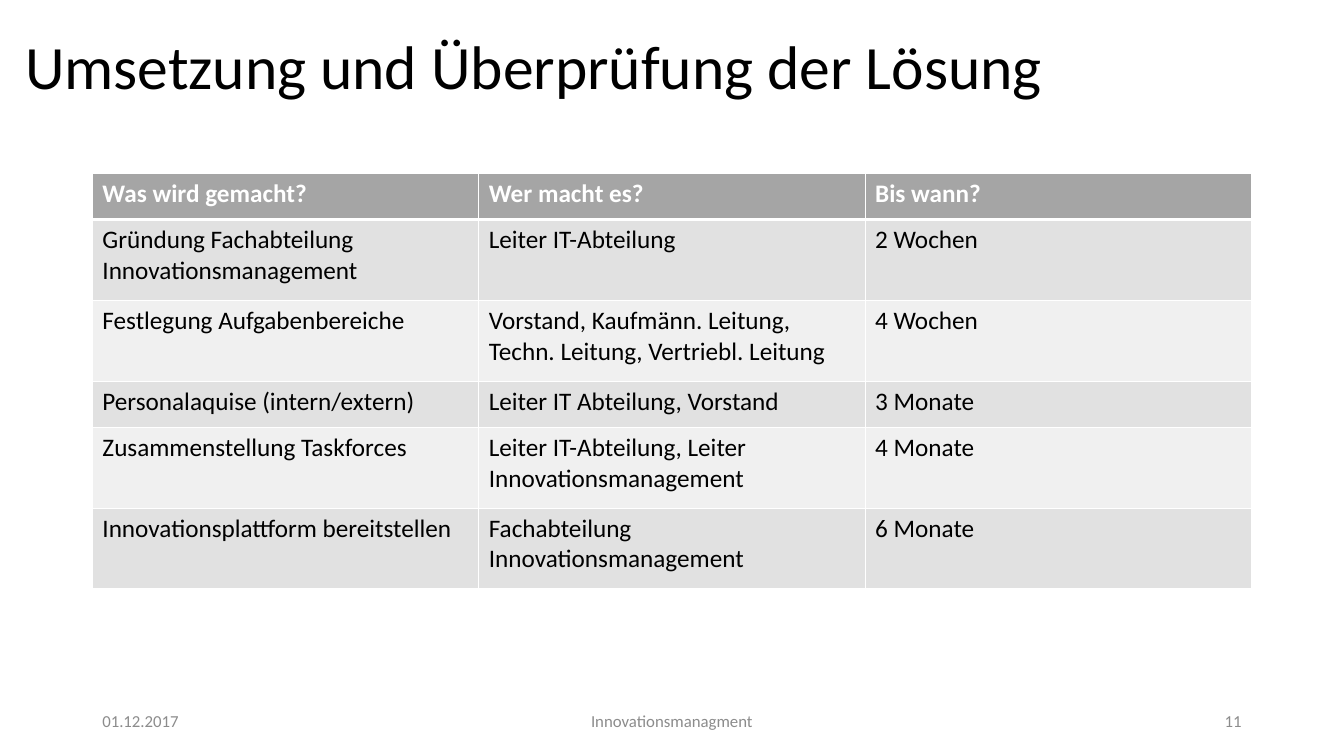
from dataclasses import dataclass

from lxml import etree
from pptx import Presentation
from pptx.dml.color import RGBColor
from pptx.enum.text import MSO_ANCHOR, PP_ALIGN
from pptx.oxml.ns import qn
from pptx.util import Pt

LEFT, CENTER, RIGHT = PP_ALIGN.LEFT, PP_ALIGN.CENTER, PP_ALIGN.RIGHT
TOP, MIDDLE = MSO_ANCHOR.TOP, MSO_ANCHOR.MIDDLE
EMU_PER_PX = 9525


@dataclass(frozen=True)
class Theme:
    font: str = "Calibri"
    title_size: int = 44
    table_size: int = 18
    footer_size: int = 12
    black: str = "000000"
    white: str = "FFFFFF"
    footer: str = "8C8C8C"
    header: str = "A5A5A5"
    bands: tuple = ("E1E1E1", "F0F0F0")
    line: int = 1
    header_line: int = 3


THEME = Theme()

TASKS = [
    ("Was wird gemacht?", "Wer macht es?", "Bis wann?"),
    ("Gründung Fachabteilung Innovationsmanagement", "Leiter IT-Abteilung", "2 Wochen"),
    ("Festlegung Aufgabenbereiche",
     "Vorstand, Kaufmänn. Leitung, Techn. Leitung, Vertriebl. Leitung", "4 Wochen"),
    ("Personalaquise (intern/extern)", "Leiter IT Abteilung, Vorstand", "3 Monate"),
    ("Zusammenstellung Taskforces",
     "Leiter IT-Abteilung, Leiter Innovationsmanagement", "4 Monate"),
    ("Innovationsplattform bereitstellen",
     "Fachabteilung Innovationsmanagement", "6 Monate"),
]
COLUMN_WIDTH = 368
ROW_HEIGHTS = (44, 77, 77, 44, 77, 77)

FOOTERS = [
    ("01.12.2017", 88, 288, LEFT),
    ("Innovationsmanagment", 424, 432, CENTER),
    ("11", 904, 288, RIGHT),
]


def px(n):
    return n * EMU_PER_PX


def set_text(tf, text, size, color, align=LEFT, bold=False):
    tf.text = text
    tf.word_wrap = True
    p = tf.paragraphs[0]
    p.alignment = align
    font = p.runs[0].font
    font.name, font.size, font.bold = THEME.font, Pt(size), bold
    font.color.rgb = RGBColor.from_string(color)
    return p


def add_title(s, text):
    title = s.shapes.title
    title.left, title.top, title.width, title.height = map(px, (0, 30, 1018, 139))
    tf = title.text_frame
    tf.vertical_anchor = TOP
    p = set_text(tf, text, THEME.title_size, THEME.black, CENTER)
    p.line_spacing = 0.9


def add_footer(s, text, x, width, align):
    tf = s.shapes.add_textbox(px(x), px(667), px(width), px(38)).text_frame
    tf.vertical_anchor = MIDDLE
    set_text(tf, text, THEME.footer_size, THEME.footer, align)


def add_borders(cell, top, bottom):
    """Draw white cell edges; must run before the fill, which follows them in the XML."""
    tc_pr = cell._tc.get_or_add_tcPr()
    for side, width in zip("LRTB", (THEME.line, THEME.line, top, bottom)):
        ln = etree.SubElement(tc_pr, qn(f"a:ln{side}"), w=str(Pt(width)))
        fill = etree.SubElement(ln, qn("a:solidFill"))
        etree.SubElement(fill, qn("a:srgbClr"), val=THEME.white)


def format_cell(cell, text, row):
    is_header = row == 0
    color = THEME.white if is_header else THEME.black
    set_text(cell.text_frame, text, THEME.table_size, color, bold=is_header)
    add_borders(cell,
                top=THEME.header_line if row == 1 else THEME.line,
                bottom=THEME.header_line if is_header else THEME.line)
    cell.fill.solid()
    band = THEME.header if is_header else THEME.bands[(row - 1) % 2]
    cell.fill.fore_color.rgb = RGBColor.from_string(band)


def add_task_table(s, x, y):
    columns = len(TASKS[0])
    table = s.shapes.add_table(len(TASKS), columns, px(x), px(y),
                               px(columns * COLUMN_WIDTH), px(sum(ROW_HEIGHTS))).table
    for column in table.columns:
        column.width = px(COLUMN_WIDTH)
    for i, (values, height) in enumerate(zip(TASKS, ROW_HEIGHTS)):
        table.rows[i].height = px(height)
        for j, value in enumerate(values):
            format_cell(table.cell(i, j), value, i)


def main():
    prs = Presentation()
    prs.slide_width, prs.slide_height = px(1280), px(720)
    s = prs.slides.add_slide(prs.slide_layouts[5])
    add_title(s, "Umsetzung und Überprüfung der Lösung")
    add_task_table(s, 88, 165)
    for footer in FOOTERS:
        add_footer(s, *footer)
    prs.save("out.pptx")


if __name__ == "__main__":
    main()
